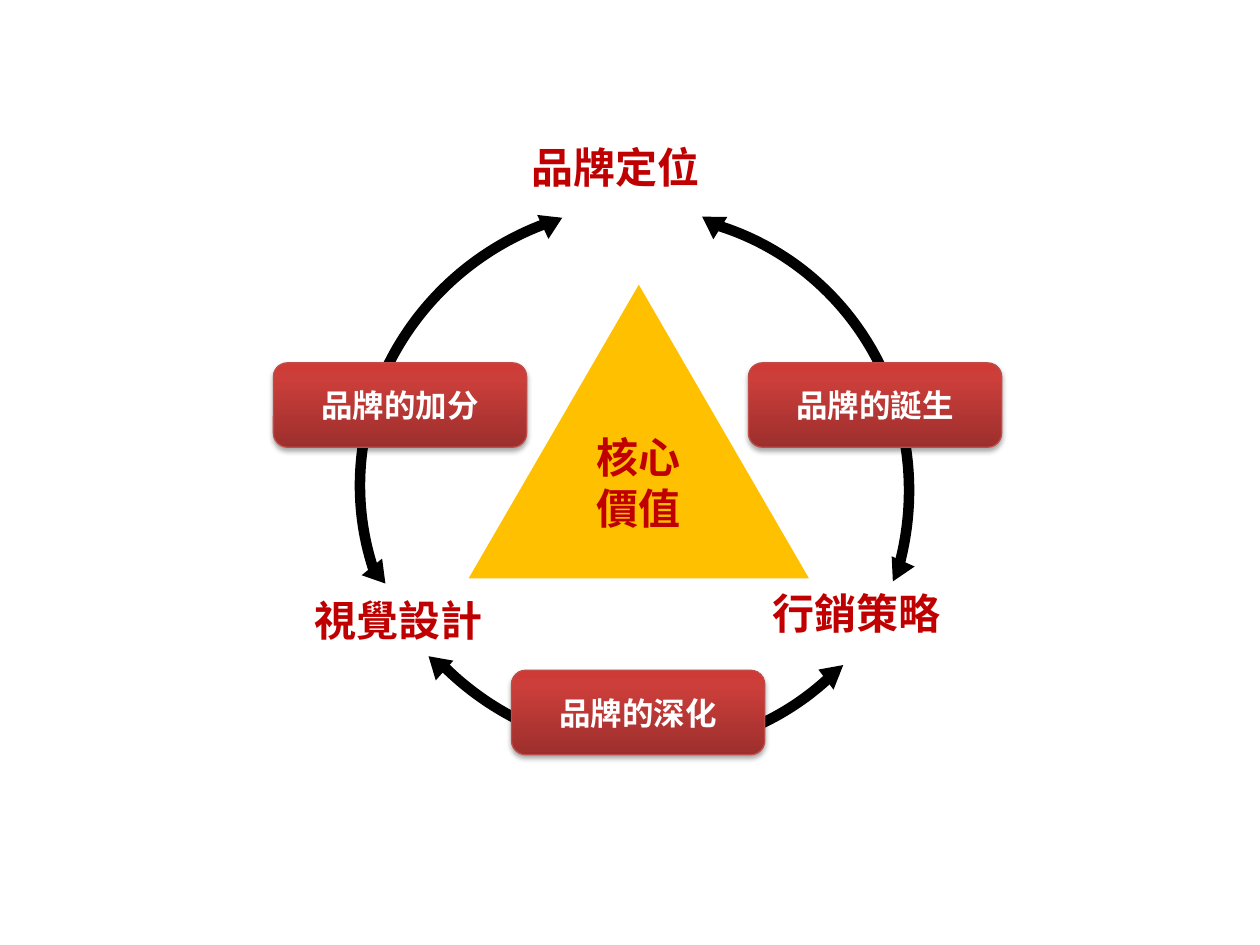
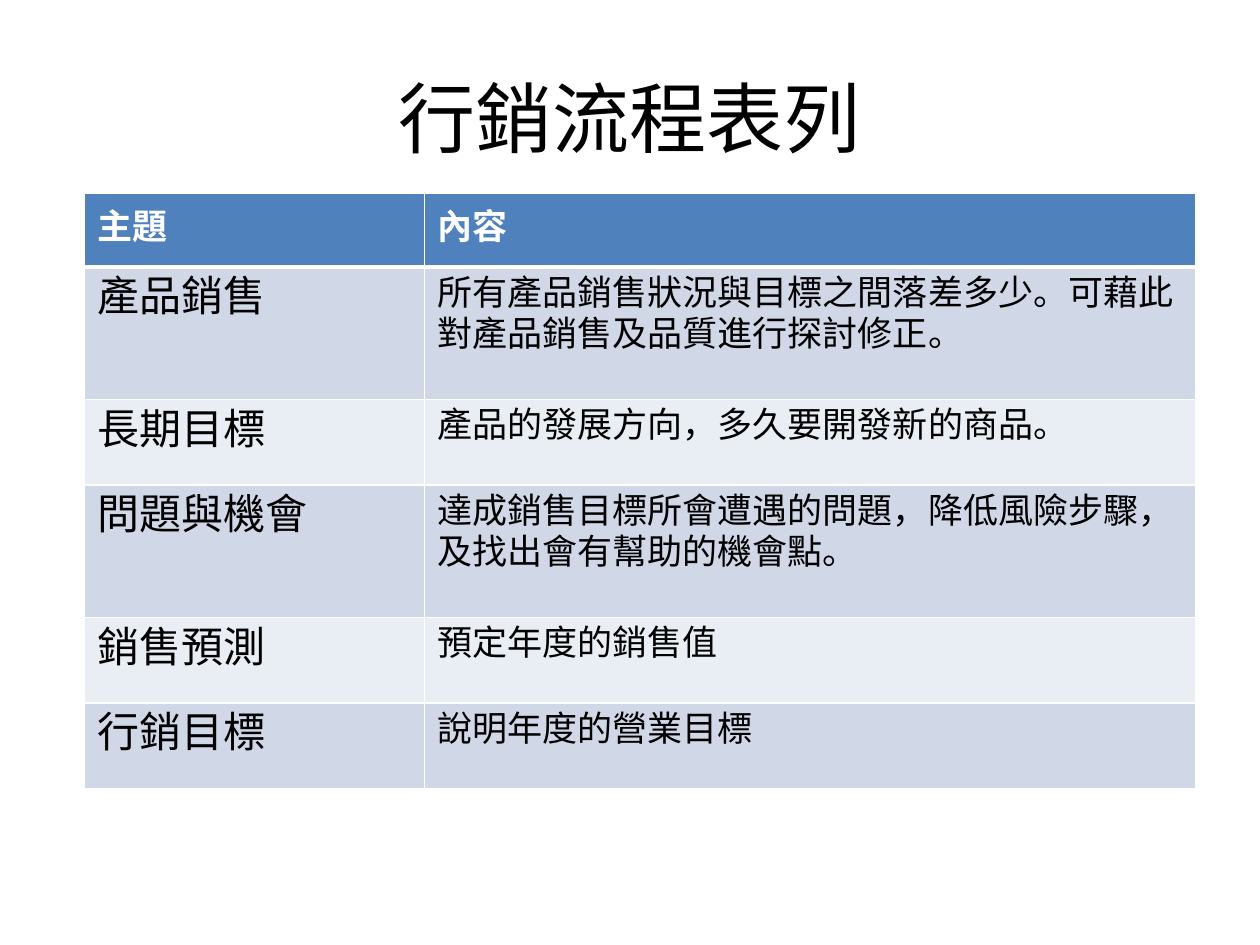
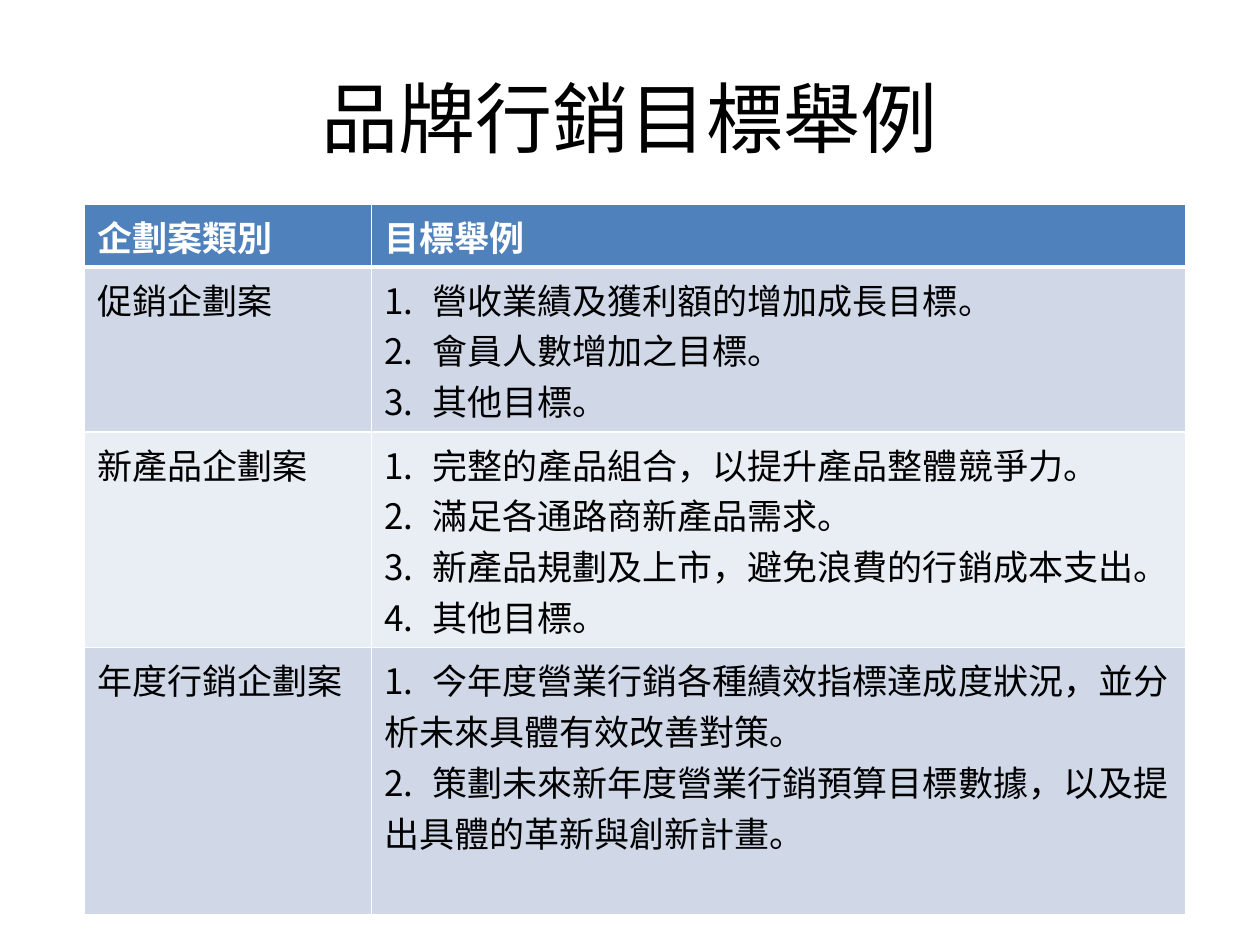
from dataclasses import dataclass

from lxml.etree import SubElement
from pptx import Presentation
from pptx.dml.color import RGBColor
from pptx.enum.shapes import MSO_SHAPE as SHAPE
from pptx.enum.text import MSO_ANCHOR as ANCHOR, PP_ALIGN as ALIGN
from pptx.oxml import parse_xml
from pptx.oxml.ns import nsdecls, qn
from pptx.util import Inches, Pt


@dataclass(frozen=True)
class Theme:
    font: str = "Noto Sans CJK SC"
    alt_font: str = "Karla"
    black: str = "000000"
    white: str = "FFFFFF"
    red: str = "C00000"
    gold: str = "FFC000"
    pill_line: str = "BF4C48"
    pill_stops: tuple = ((0, "9C2F2D"), (80, "CB3E3A"), (100, "CE3B37"))
    header: str = "4F81BD"
    bands: tuple = ("D0D8E8", "E9EDF4")
    title: int = 44
    label: int = 24
    body: int = 20
    pill: int = 18
    hang: float = 0.38


T = Theme()


def rgb(value):
    return RGBColor.from_string(value)


def write(tf, text, size=T.body, color=T.black, bold=False, font=T.font,
          align=ALIGN.LEFT, anchor=ANCHOR.TOP, before=0):
    tf.word_wrap = True
    tf.vertical_anchor = anchor
    for i, line in enumerate(text.split("\n")):
        p = tf.paragraphs[0] if i == 0 else tf.add_paragraph()
        p.alignment = align
        p.space_before = Pt(before)
        r = p.add_run()
        r.text = line
        r.font.size, r.font.bold, r.font.name = Pt(size), bold, font
        r.font.color.rgb = rgb(color)
        SubElement(r.font._element, qn("a:ea"), typeface=font)


def add_text(s, box, text, **fmt):
    sp = s.shapes.add_textbox(*map(Inches, box))
    write(sp.text_frame, text, **fmt)


def add_shape(s, kind, box, fill=None, line=None, width=1, rotation=0):
    sp = s.shapes.add_shape(kind, *map(Inches, box))
    sp.shadow.inherit = False
    sp.rotation = rotation
    if fill:
        sp.fill.solid()
        sp.fill.fore_color.rgb = rgb(fill)
    else:
        sp.fill.background()
    if line:
        sp.line.color.rgb = rgb(line)
        sp.line.width = Pt(width)
    else:
        sp.line.fill.background()
    return sp


def add_pill(s, box, text):
    sp = add_shape(s, SHAPE.ROUNDED_RECTANGLE, box, line=T.pill_line, width=0.75)
    stops = "".join(f'<a:gs pos="{pos * 1000}"><a:srgbClr val="{c}"/></a:gs>'
                    for pos, c in T.pill_stops)
    pr = sp._element.spPr
    pr.replace(pr.find(qn("a:noFill")), parse_xml(
        f'<a:gradFill {nsdecls("a")}><a:gsLst>{stops}</a:gsLst>'
        '<a:lin ang="16200000" scaled="0"/></a:gradFill>'))
    pr.find(qn("a:effectLst")).append(parse_xml(
        f'<a:outerShdw {nsdecls("a")} blurRad="{Pt(3.1)}" dist="{Pt(1.8)}" '
        f'dir="5400000" rotWithShape="0"><a:srgbClr val="{T.black}">'
        '<a:alpha val="35000"/></a:srgbClr></a:outerShdw>'))
    write(sp.text_frame, text, size=T.pill, color=T.white, bold=True,
          align=ALIGN.CENTER, anchor=ANCHOR.MIDDLE)


def add_cycle(s, left, top):
    def at(x, y, w, h):
        return left + x, top + y, w, h

    label = dict(size=T.label, color=T.red, bold=True)
    core = add_shape(s, SHAPE.ISOSCELES_TRIANGLE, at(1.55, 1.19, 2.7, 2.33), T.gold)
    core.text_frame.margin_top, core.text_frame.margin_bottom = 0, Inches(0.36)
    write(core.text_frame, "核心\n價值", align=ALIGN.CENTER,
          anchor=ANCHOR.MIDDLE, **label)
    for x, y, turn in ((0.69, 0.62, 16.2), (0.71, 0.44, 135.1), (0.74, 0.51, 250.2)):
        add_shape(s, SHAPE.ARC, at(x, y, 4.35, 4.47), line=T.black, width=6,
                  rotation=turn)
    for x, y, text in ((1.95, 0, "品牌定位"), (3.86, 3.54, "行銷策略"),
                       (0.23, 3.6, "視覺設計")):
        add_text(s, at(x, y, 1.88, 0.61), text, **label)
    for x, y, turn in ((3.37, 0.61, 302.1), (1.19, 4.11, 311.8), (2.11, 0.61, 64.8),
                       (0.73, 3.41, 140.9), (4.3, 4.19, 291.4), (4.85, 3.33, 325.7)):
        add_shape(s, SHAPE.ISOSCELES_TRIANGLE, at(x, y, 0.21, 0.17), T.black,
                  rotation=turn)
    for x, y, text in ((3.77, 1.81, "品牌的誕生"), (1.89, 4.25, "品牌的深化"),
                       (0, 1.81, "品牌的加分")):
        add_pill(s, at(x, y, 2.01, 0.67), text)


def add_title(s, text):
    add_text(s, (0.5, 0.3, 9, 1.25), text, size=T.title, align=ALIGN.CENTER,
             anchor=ANCHOR.MIDDLE)


def style_cell(cell, fill, bottom):
    cell.fill.solid()
    cell.fill.fore_color.rgb = rgb(fill)
    pr = cell._tc.get_or_add_tcPr()
    for i, (side, width) in enumerate(zip("LRTB", (1, 1, 1, bottom))):
        pr.insert(i, parse_xml(
            f'<a:ln{side} {nsdecls("a")} w="{Pt(width)}"><a:solidFill>'
            f'<a:srgbClr val="{T.white}"/></a:solidFill></a:ln{side}>'))


def add_grid(s, left, top, cols, heights, rows, first_size=T.body, font=T.font,
             before=0):
    box = left, top, sum(cols), sum(heights)
    table = s.shapes.add_table(len(rows), len(cols), *map(Inches, box)).table
    for col, width in zip(table.columns, cols):
        col.width = Inches(width)
    for i, (height, texts) in enumerate(zip(heights, rows)):
        table.rows[i].height = Inches(height)
        for j, text in enumerate(texts):
            cell = table.cell(i, j)
            if i == 0:
                style_cell(cell, T.header, 3)
                write(cell.text_frame, text, color=T.white, bold=True)
                continue
            size = T.body if j else first_size
            style_cell(cell, T.bands[(i - 1) % 2], 3 if i == 0 else 1)
            write(cell.text_frame, text, size=size, font=font, before=before * size)
    return table


def number_items(cell, automatic):
    for i, p in enumerate(cell.text_frame.paragraphs):
        pr = p._p.get_or_add_pPr()
        hang = Inches(T.hang)
        if i < automatic:
            pr.set("marL", str(hang))
            pr.set("indent", str(-hang))
            SubElement(pr, qn("a:buFont"), typeface="+mj-lt")
            SubElement(pr, qn("a:buAutoNum"), type="arabicPeriod")
        else:
            tabs = SubElement(pr, qn("a:tabLst"))
            SubElement(tabs, qn("a:tab"), pos=str(hang), algn="l")
            p.runs[0].text = f"{i + 1}.\t{p.runs[0].text}"


def process_slide(s):
    add_title(s, "行銷流程表列")
    rows = (
        ("主題", "內容"),
        ("產品銷售", "所有產品銷售狀況與目標之間落差多少。可藉此對產品銷售及品質進行探討修正。"),
        ("長期目標", "產品的發展方向，多久要開發新的商品。"),
        ("問題與機會", "達成銷售目標所會遭遇的問題，降低風險步驟，及找出會有幫助的機會點。"),
        ("銷售預測", "預定年度的銷售值"),
        ("行銷目標", "說明年度的營業目標"),
    )
    add_grid(s, 0.67, 1.53, (2.7, 6.12), (0.59, 1.05, 0.68, 1.05, 0.68, 0.68), rows,
             first_size=T.label, font=T.alt_font, before=0.2)


def goals_slide(s):
    add_title(s, "品牌行銷目標舉例")
    rows = (
        ("企劃案類別", "目標舉例"),
        ("促銷企劃案",
         "營收業績及獲利額的增加成長目標。\n會員人數增加之目標。\n其他目標。"),
        ("新產品企劃案",
         "完整的產品組合，以提升產品整體競爭力。\n滿足各通路商新產品需求。\n"
         "新產品規劃及上市，避免浪費的行銷成本支出。\n其他目標。"),
        ("年度行銷企劃案",
         "今年度營業行銷各種績效指標達成度狀況，並分析未來具體有效改善對策。\n"
         "策劃未來新年度營業行銷預算目標數據，以及提出具體的革新與創新計畫。"),
    )
    table = add_grid(s, 0.67, 1.62, (2.28, 6.46), (0.5, 1.31, 1.71, 2.12), rows)
    for row, automatic in ((1, 2), (2, 1), (3, 0)):
        number_items(table.cell(row, 1), automatic)


def main():
    prs = Presentation()
    prs.slide_width, prs.slide_height = Inches(10), Inches(7.5)
    blank = prs.slide_layouts[6]
    add_cycle(prs.slides.add_slide(blank), 2.17, 1.07)
    process_slide(prs.slides.add_slide(blank))
    goals_slide(prs.slides.add_slide(blank))
    prs.save("out.pptx")


if __name__ == "__main__":
    main()
